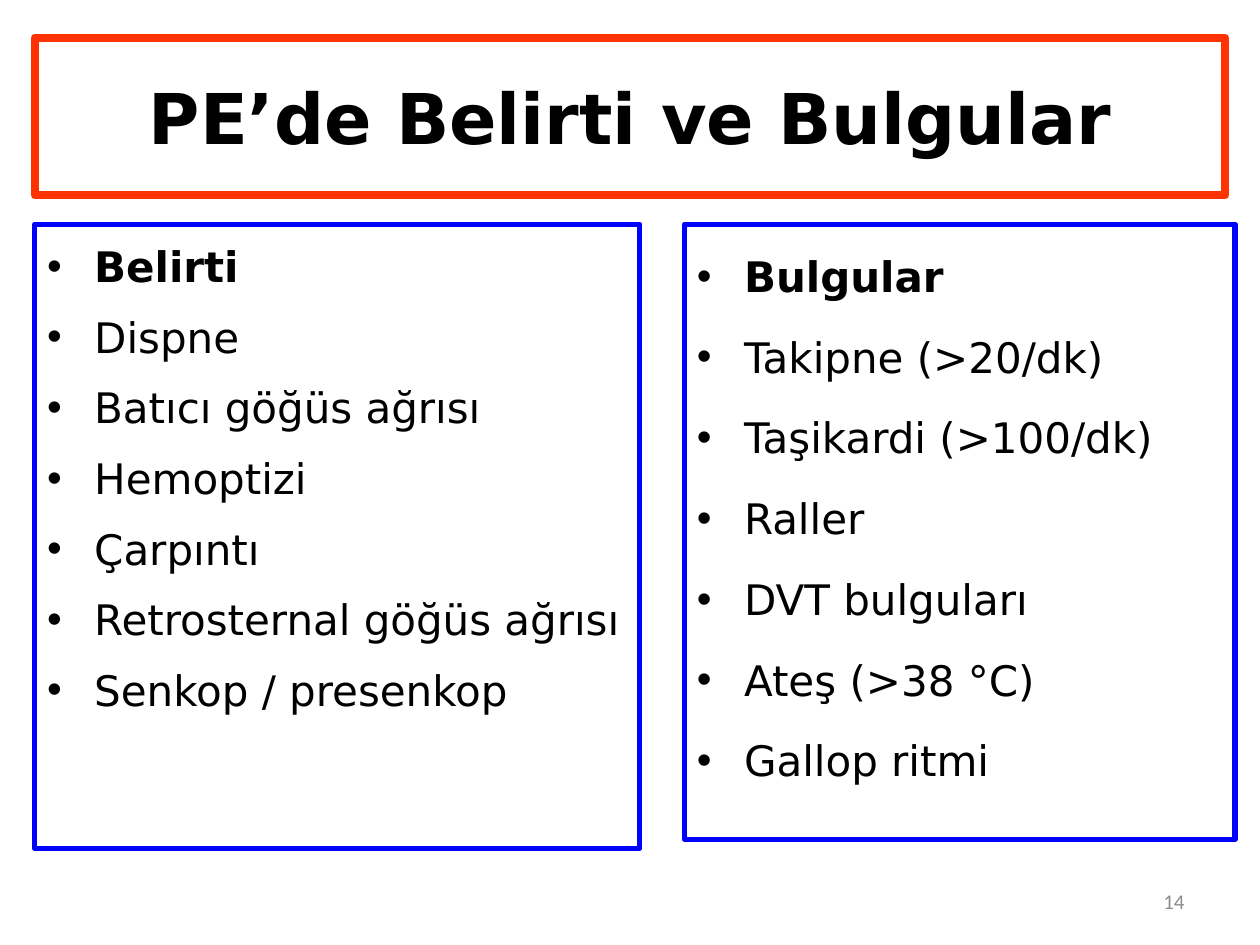
from lxml import etree
from pptx import Presentation
from pptx import util as u
from pptx.dml.color import RGBColor
from pptx.enum import shapes, text
from pptx.oxml import ns


def colour(value):
    return RGBColor.from_string(value)


class SlideBuilder:
    """Holds the style and the current slide, and adds each kind of element."""

    font = "DejaVu Sans"
    ink = "000000"
    indent = u.Cm(0.95)

    def __init__(self, page):
        self.page = page

    def set_font(self, para, size, bold=False, name=None, ink=None):
        para.font.name = name or self.font
        para.font.size = u.Pt(size)
        para.font.bold = bold
        para.font.color.rgb = colour(ink or self.ink)

    def outline(self, box, line, width):
        box.line.color.rgb = colour(line)
        box.line.width = u.Pt(width)

    def title(self, words, left, top, width, height):
        box = self.page.shapes.title
        box.left, box.top = u.Cm(left), u.Cm(top)
        box.width, box.height = u.Cm(width), u.Cm(height)
        self.outline(box, "FF3300", 4.5)
        frame = box.text_frame
        frame.text = words
        frame.auto_size = text.MSO_AUTO_SIZE.NONE
        frame.vertical_anchor = text.MSO_ANCHOR.MIDDLE
        para = frame.paragraphs[0]
        para.alignment = text.PP_ALIGN.CENTER
        self.set_font(para, 40, bold=True)

    def bullet(self, para):
        properties = para._p.get_or_add_pPr()
        properties.set("marL", str(self.indent))
        properties.set("indent", str(-self.indent))
        etree.SubElement(properties, ns.qn("a:buFont"), typeface="Arial")
        etree.SubElement(properties, ns.qn("a:buChar"), char="•")

    def list_box(self, items, left, top, width, height, spacing):
        box = self.page.shapes.add_shape(
            shapes.MSO_SHAPE.RECTANGLE, u.Cm(left), u.Cm(top), u.Cm(width), u.Cm(height))
        box.shadow.inherit = False
        box.fill.background()
        self.outline(box, "0000FF", 3)
        frame = box.text_frame
        frame.word_wrap = True
        frame.vertical_anchor = text.MSO_ANCHOR.TOP
        frame.text = "\n".join(items)
        for index, para in enumerate(frame.paragraphs):
            para.alignment = text.PP_ALIGN.LEFT
            para.line_spacing = spacing
            para.space_before = u.Pt(5.8)
            self.bullet(para)
            self.set_font(para, 24, bold=index == 0)

    def page_number(self, number, left, top, width, height):
        box = self.page.shapes.add_textbox(u.Cm(left), u.Cm(top), u.Cm(width), u.Cm(height))
        frame = box.text_frame
        frame.word_wrap = True
        frame.vertical_anchor = text.MSO_ANCHOR.MIDDLE
        frame.text = str(number)
        para = frame.paragraphs[0]
        para.alignment = text.PP_ALIGN.RIGHT
        self.set_font(para, 12, name="Calibri", ink="8C8C8C")


def main():
    deck = Presentation()
    deck.slide_width, deck.slide_height = u.Cm(25.4), u.Cm(19.05)
    builder = SlideBuilder(deck.slides.add_slide(deck.slide_layouts[5]))
    builder.page_number(14, 18.21, 17.65, 5.92, 1.02)
    builder.title("PE’de Belirti ve Bulgular", 0.7, 0.76, 24, 3.18)
    symptoms = ["Belirti", "Dispne", "Batıcı göğüs ağrısı", "Hemoptizi", "Çarpıntı",
                "Retrosternal göğüs ağrısı", "Senkop / presenkop"]
    findings = ["Bulgular", "Takipne (>20/dk)", "Taşikardi (>100/dk)", "Raller",
                "DVT bulguları", "Ateş (>38 °C)", "Gallop ritmi"]
    builder.list_box(symptoms, 0.7, 4.52, 12.2, 12.58, spacing=1.2)
    builder.list_box(findings, 13.8, 4.52, 11.1, 12.4, spacing=1.4)
    deck.save("out.pptx")


if __name__ == "__main__":
    main()
